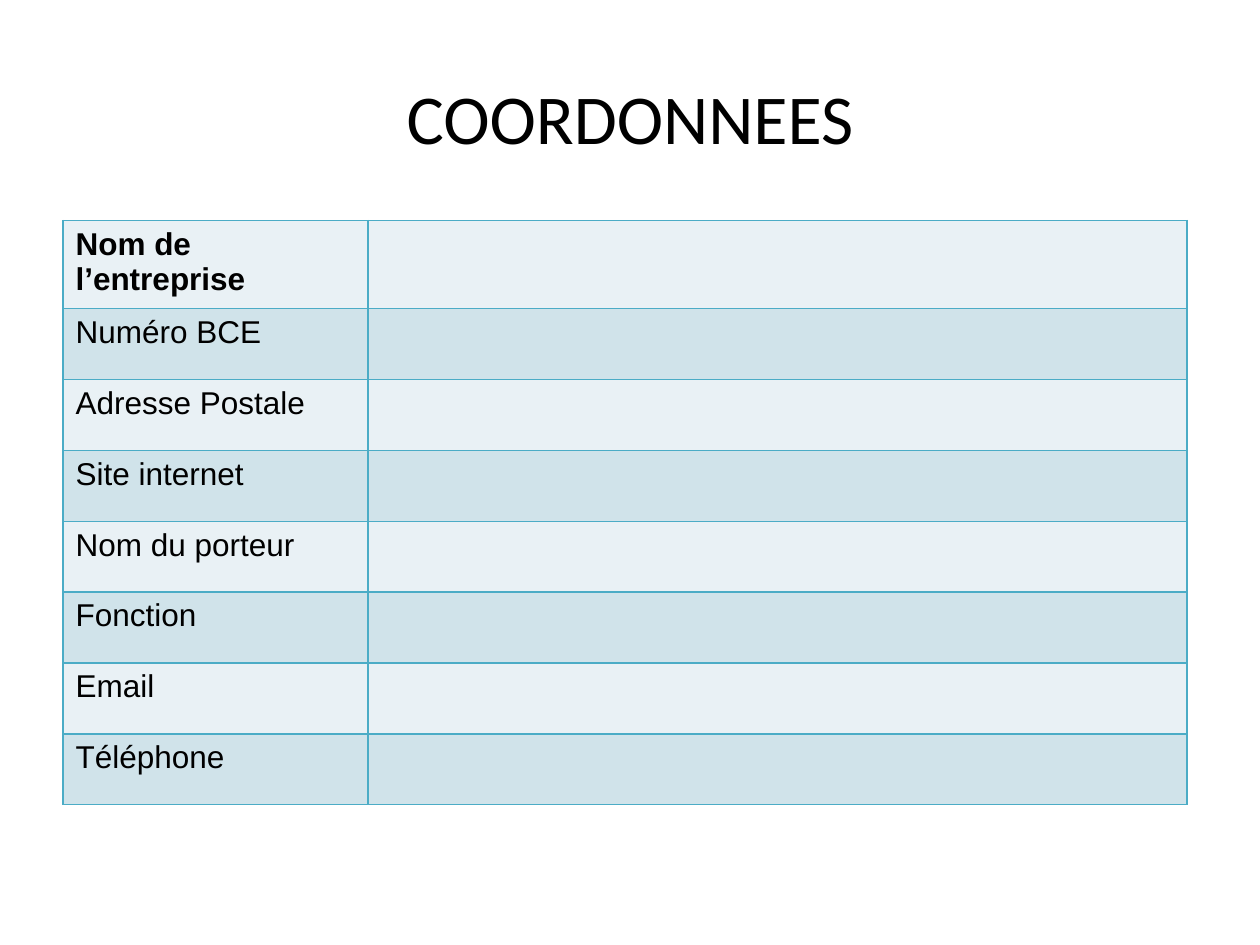
import dataclasses

import lxml.etree
import pptx
import pptx.dml.color
import pptx.enum.text
import pptx.oxml.ns
import pptx.util

Inches = pptx.util.Inches
Pt = pptx.util.Pt
RGBColor = pptx.dml.color.RGBColor


@dataclasses.dataclass(frozen=True)
class Theme:
    text: str = "000000"
    border: str = "4BACC6"
    bands: tuple = ("E9F1F5", "D0E3EA")
    title_font: str = "Calibri"
    table_font: str = "Arial"
    title_size: int = 40
    table_size: int = 18
    border_width: int = 1


class SlideBuilder:
    def __init__(self, slide, theme):
        self.slide = slide
        self.theme = theme

    def set_font(self, paragraph, name, size, bold=False):
        paragraph.font.name = name
        paragraph.font.size = Pt(size)
        paragraph.font.bold = bold
        paragraph.font.color.rgb = RGBColor.from_string(self.theme.text)

    def title(self, text, left, top, width, height):
        box = self.slide.shapes.add_textbox(left, top, width, height)
        frame = box.text_frame
        frame.word_wrap = True
        frame.vertical_anchor = pptx.enum.text.MSO_ANCHOR.MIDDLE
        paragraph = frame.paragraphs[0]
        paragraph.text = text
        paragraph.alignment = pptx.enum.text.PP_ALIGN.CENTER
        self.set_font(paragraph, self.theme.title_font, self.theme.title_size)

    def border_cell(self, cell):
        qualified = pptx.oxml.ns.qn
        properties = cell._tc.get_or_add_tcPr()
        for position, side in enumerate(("lnL", "lnR", "lnT", "lnB")):
            line = lxml.etree.Element(qualified(f"a:{side}"))
            line.set("w", str(Pt(self.theme.border_width)))
            fill = lxml.etree.SubElement(line, qualified("a:solidFill"))
            color = lxml.etree.SubElement(fill, qualified("a:srgbClr"))
            color.set("val", self.theme.border)
            properties.insert(position, line)

    def form_table(self, labels, left, top, column_widths, row_height):
        table = self.slide.shapes.add_table(
            len(labels), len(column_widths), left, top,
            sum(column_widths), row_height * len(labels),
        ).table
        for column, width in zip(table.columns, column_widths):
            column.width = width
        for index, (row, label) in enumerate(zip(table.rows, labels)):
            row.height = row_height
            band = self.theme.bands[index % len(self.theme.bands)]
            for cell in row.cells:
                cell.fill.solid()
                cell.fill.fore_color.rgb = RGBColor.from_string(band)
                self.border_cell(cell)
            paragraph = row.cells[0].text_frame.paragraphs[0]
            paragraph.text = label
            self.set_font(paragraph, self.theme.table_font,
                          self.theme.table_size, bold=index == 0)


def main():
    deck = pptx.Presentation()
    deck.slide_width = Inches(10)
    deck.slide_height = Inches(7.5)
    builder = SlideBuilder(deck.slides.add_slide(deck.slide_layouts[6]), Theme())

    builder.title("COORDONNEES", Inches(0.5), Inches(0.3), Inches(9), Inches(1.25))
    labels = [
        "Nom de l’entreprise",
        "Numéro BCE",
        "Adresse Postale",
        "Site internet",
        "Nom du porteur",
        "Fonction",
        "Email",
        "Téléphone",
    ]
    builder.form_table(labels, Inches(0.5), Inches(1.75),
                       [Inches(2.42), Inches(6.5)], Inches(4.5 / len(labels)))
    deck.save("out.pptx")


if __name__ == "__main__":
    main()
